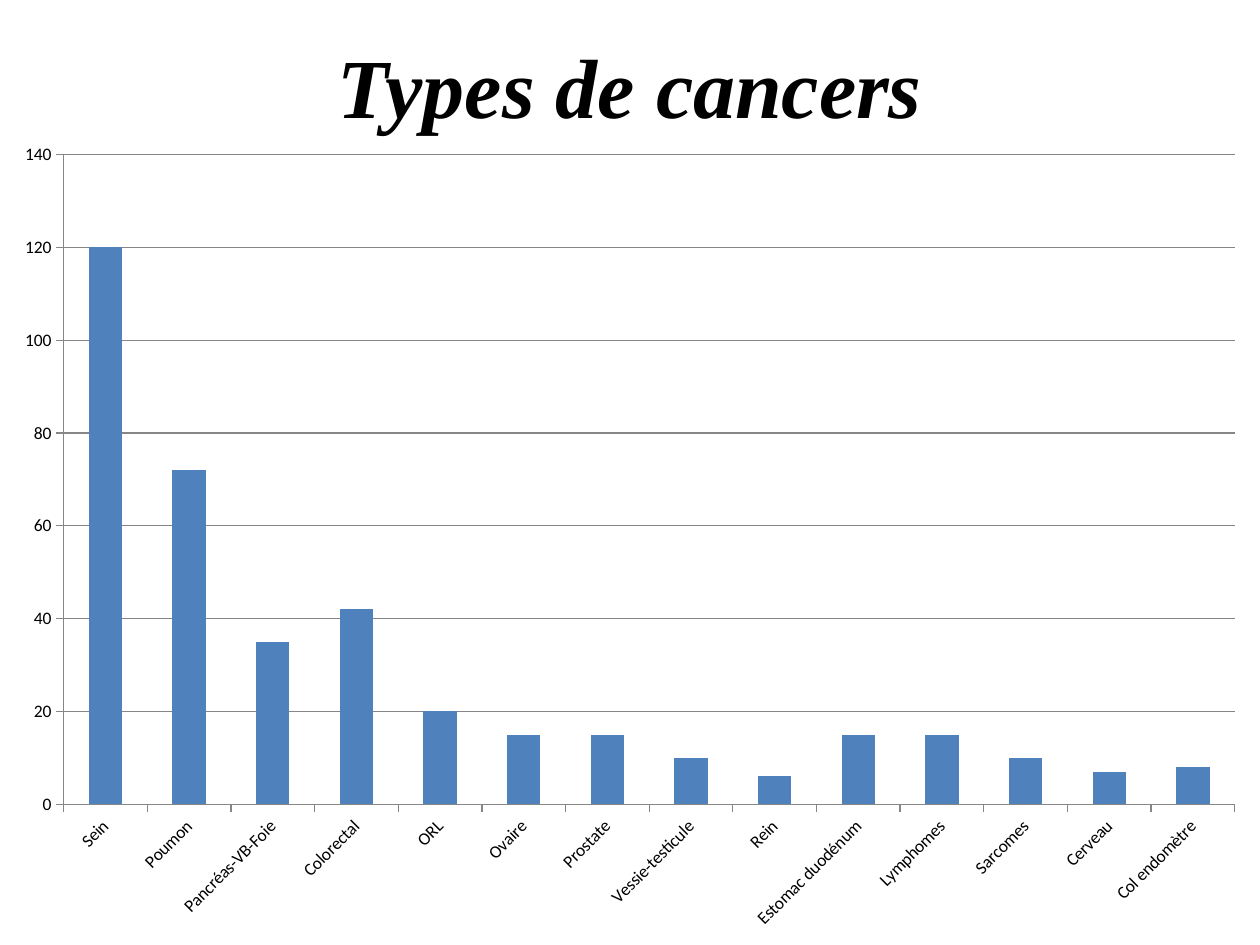
from dataclasses import dataclass

import pptx
import pptx.chart.data
import pptx.dml.color
import pptx.enum.chart
import pptx.enum.text
import pptx.util


@dataclass(frozen=True)
class Theme:
    ink: str = "000000"
    bar: str = "4F81BD"
    rule: str = "868686"
    title_font: str = "Times New Roman"
    label_font: str = "Calibri"
    title_size: int = 48
    label_size: int = 10


CANCERS = {
    "Sein": 120,
    "Poumon": 72,
    "Pancréas-VB-Foie": 35,
    "Colorectal": 42,
    "ORL": 20,
    "Ovaire": 15,
    "Prostate": 15,
    "Vessie-testicule": 10,
    "Rein": 6,
    "Estomac duodénum": 15,
    "Lymphomes": 15,
    "Sarcomes": 10,
    "Cerveau": 7,
    "Col endomètre": 8,
}


def rgb(value):
    return pptx.dml.color.RGBColor.from_string(value)


class Deck:
    def __init__(self, theme, width=10, height=7.5):
        self.theme = theme
        self.prs = pptx.Presentation()
        self.prs.slide_width = pptx.util.Inches(width)
        self.prs.slide_height = pptx.util.Inches(height)
        self.s = self.prs.slides.add_slide(self.prs.slide_layouts[6])

    def box(self, x, y, w, h):
        """Turn shares of the slide's size into lengths."""
        width, height = self.prs.slide_width, self.prs.slide_height
        return int(x * width), int(y * height), int(w * width), int(h * height)

    def style(self, font, name, size):
        font.name, font.size = name, pptx.util.Pt(size)
        font.color.rgb = rgb(self.theme.ink)

    def title(self, text, *area):
        tf = self.s.shapes.add_textbox(*self.box(*area)).text_frame
        tf.word_wrap = True
        tf.vertical_anchor = pptx.enum.text.MSO_ANCHOR.MIDDLE
        p = tf.paragraphs[0]
        p.text = text
        p.alignment = pptx.enum.text.PP_ALIGN.CENTER
        font = p.runs[0].font
        self.style(font, self.theme.title_font, self.theme.title_size)
        font.bold = font.italic = True

    def columns(self, values, *area):
        data = pptx.chart.data.CategoryChartData()
        data.categories = list(values)
        data.add_series("Series 1", list(values.values()))
        kind = pptx.enum.chart.XL_CHART_TYPE.COLUMN_STACKED
        chart = self.s.shapes.add_chart(kind, *self.box(*area), data).chart
        chart.has_title = chart.has_legend = False
        self.style(chart.font, self.theme.label_font, self.theme.label_size)

        plot = chart.plots[0]
        plot.vary_by_categories = False
        plot.gap_width, plot.overlap = 150, 100
        fill = plot.series[0].format.fill
        fill.solid()
        fill.fore_color.rgb = rgb(self.theme.bar)

        cat, val = chart.category_axis, chart.value_axis
        val.has_major_gridlines = True
        val.minimum_scale, val.maximum_scale, val.major_unit = 0, 140, 20
        for axis in (cat, val):
            axis.major_tick_mark = pptx.enum.chart.XL_TICK_MARK.OUTSIDE
            axis.minor_tick_mark = pptx.enum.chart.XL_TICK_MARK.NONE
            self.style(axis.tick_labels.font, self.theme.label_font, self.theme.label_size)
        for part in (cat, val, val.major_gridlines):
            part.format.line.color.rgb = rgb(self.theme.rule)
            part.format.line.width = pptx.util.Pt(0.75)
        # Slant the category labels by 45 degrees (60000 units each).
        for body in cat._element.xpath("c:txPr/a:bodyPr"):
            body.set("rot", str(-45 * 60000))


def main():
    deck = Deck(Theme())
    deck.title("Types de cancers", 0.05, 0, 0.9, 0.18)
    deck.columns(CANCERS, 0, 0.136, 1, 0.864)
    deck.prs.save("out.pptx")


if __name__ == "__main__":
    main()
